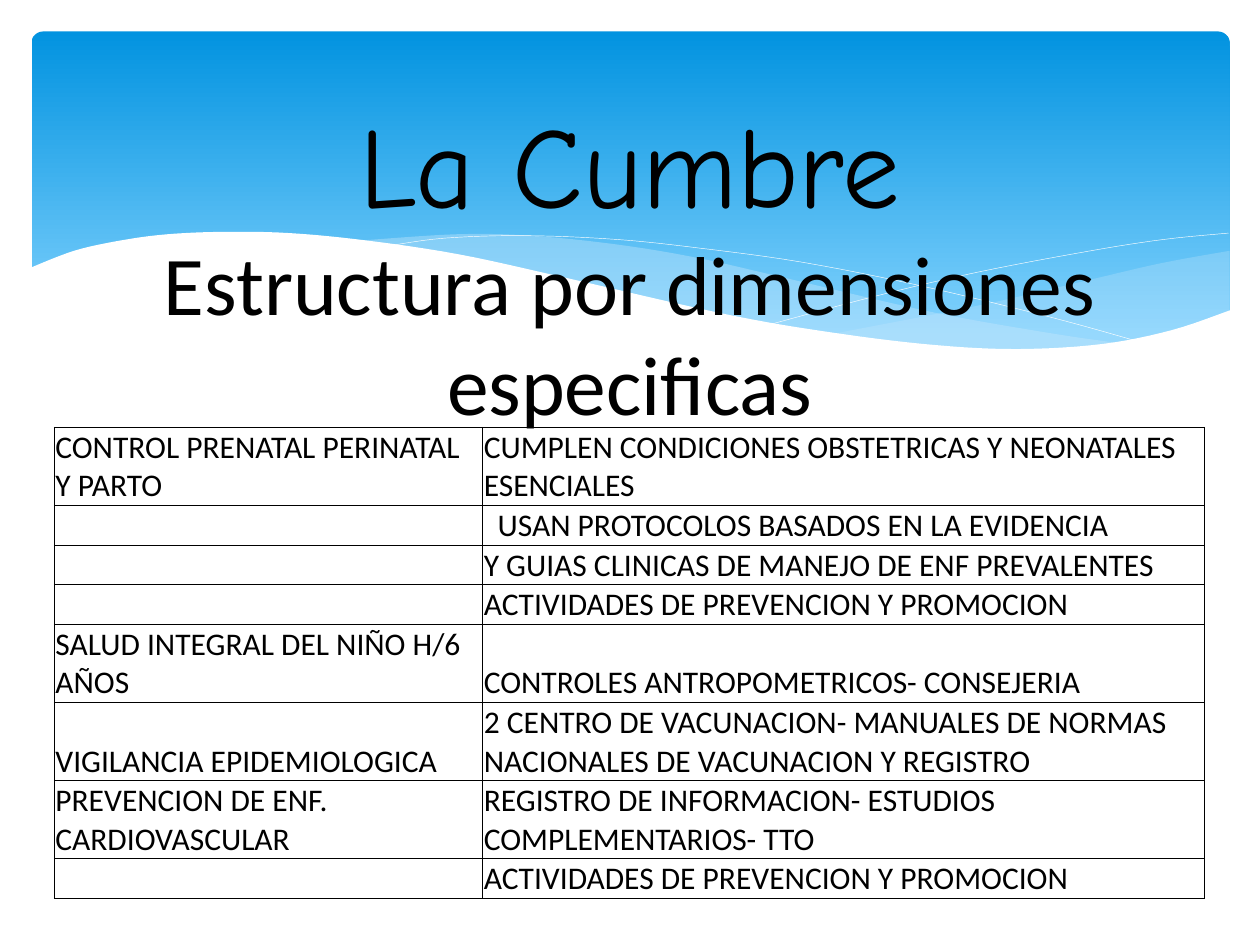
from lxml import etree
from pptx import Presentation, util as u
from pptx.dml.color import RGBColor
from pptx.enum import shapes, text
from pptx.oxml.ns import qn

COLORS = {"ink": "000000", "paper": "FFFFFF", "sky": "0293E0",
          "horizon": "83D3FE", "mist": "C6E7FC"}
COLUMN = ROW = u.Inches(0.1)  # grid of 100 columns by 75 rows


def smooth(knots, steps=6):
    """Catmull-Rom curve through the knots."""
    padded = [knots[0], *knots, knots[-1]]
    points = [knots[0]]
    for p0, p1, p2, p3 in zip(padded, padded[1:], padded[2:], padded[3:]):
        for step in range(1, steps + 1):
            t = step / steps
            points.append(tuple(
                (2 * b + (c - a) * t + (2 * a - 5 * b + 4 * c - d) * t ** 2
                 + (3 * b - a - 3 * c + d) * t ** 3) / 2
                for a, b, c, d in zip(p0, p1, p2, p3)))
    return points


class SlideBuilder:
    def __init__(self, deck):
        self.slide = deck.slides.add_slide(deck.slide_layouts[6])

    def color(self, name):
        return RGBColor.from_string(COLORS[name])

    def box(self, col, row, cols, rows):
        return [round(n) for n in (col * COLUMN, row * ROW, cols * COLUMN, rows * ROW)]

    def style_run(self, run, font, size):
        run.font.name, run.font.size = font, u.Pt(size)
        run.font.color.rgb = self.color("ink")

    def banner(self, col, row, cols, rows):
        banner = self.slide.shapes.add_shape(
            shapes.MSO_SHAPE.ROUNDED_RECTANGLE, *self.box(col, row, cols, rows))
        banner.shadow.inherit = False
        banner.adjustments[0] = 0.034
        banner.line.fill.background()
        banner.fill.gradient()
        banner.fill.gradient_angle = 270
        stops = zip(banner.fill.gradient_stops, ("sky", "horizon"), (0, 0.9))
        for stop, name, position in stops:
            stop.color.rgb = self.color(name)
            stop.position = position

    def wave(self, *curves, fill=None, alpha=100):
        """Filled area bounded by the curves, or a white hairline without fill."""
        points = [(round(x * COLUMN), round(y * ROW))
                  for curve in curves for x, y in smooth(curve)]
        builder = self.slide.shapes.build_freeform(*points[0])
        builder.add_line_segments(points[1:], close=bool(fill))
        wave = builder.convert_to_shape()
        wave.shadow.inherit = False
        if not fill:
            wave.fill.background()
            wave.line.color.rgb = self.color("paper")
            wave.line.width = u.Pt(0.25)
            return
        wave.line.fill.background()
        wave.fill.solid()
        wave.fill.fore_color.rgb = self.color(fill)
        if alpha < 100:
            tint = wave.fill._xPr.find(".//" + qn("a:srgbClr"))
            etree.SubElement(tint, qn("a:alpha"), val=str(alpha * 1000))

    def title(self, place, lines):
        frame = self.slide.shapes.add_textbox(*self.box(*place)).text_frame
        frame.word_wrap = True
        frame.vertical_anchor = text.MSO_ANCHOR.BOTTOM
        frame.margin_bottom = 0
        frame.text = "\n".join(line for line, _, _ in lines)
        for paragraph, (_, font, size) in zip(frame.paragraphs, lines):
            paragraph.alignment = text.PP_ALIGN.CENTER
            self.style_run(paragraph.runs[0], font, size)

    def cell_borders(self, cell):
        props = cell._tc.get_or_add_tcPr()
        for position, side in enumerate(("lnL", "lnR", "lnT", "lnB")):
            border = etree.Element(qn("a:" + side), w=str(u.Pt(0.5)))
            fill = etree.SubElement(border, qn("a:solidFill"))
            etree.SubElement(fill, qn("a:srgbClr"), val=COLORS["ink"])
            props.insert(position, border)

    def table(self, col, row, col_widths, row_heights, records, indented):
        place = self.box(col, row, sum(col_widths), sum(row_heights))
        table = self.slide.shapes.add_table(len(records), len(col_widths), *place).table
        table.first_row = table.horz_banding = False
        for column, width in zip(table.columns, col_widths):
            column.width = round(width * COLUMN)
        for line, height, record in zip(table.rows, row_heights, records):
            line.height = round(height * ROW)
            for cell, words in zip(line.cells, record):
                cell.fill.background()
                cell.vertical_anchor = text.MSO_ANCHOR.BOTTOM
                cell.margin_left = u.Inches(0.12 if words == indented else 0.01)
                cell.margin_right = cell.margin_top = u.Inches(0.01)
                cell.margin_bottom = 0
                self.cell_borders(cell)
                cell.text = words
                for run in cell.text_frame.paragraphs[0].runs:
                    self.style_run(run, "Calibri", 18)


def main():
    deck = Presentation()
    deck.slide_width, deck.slide_height = 100 * COLUMN, 75 * ROW
    page = SlideBuilder(deck)

    # Sky banner
    page.banner(2.5, 2.5, 95.1, 27)

    # Translucent waves
    page.wave([(97.6, 19.9), (92.1, 20.9), (86.1, 22.3), (77.9, 24.2), (66.1, 26.5)],
              [(66.1, 26.5), (71.8, 27.2), (76.9, 27.7), (81.4, 27.8), (86.3, 27.5),
               (90.5, 26.9), (94.2, 25.9), (97.6, 24.7)], fill="mist", alpha=29)
    page.wave([(89.3, 27.3), (83.7, 26.5), (74.1, 24.8), (62.9, 22.2), (55.5, 20.5),
               (48.9, 19.4), (42, 18.7), (36.1, 18.6), (28.6, 19.1)],
              [(28.6, 19.1), (36.2, 20.3), (44.9, 22.2), (56.6, 24.8), (66.5, 26.6),
               (73.6, 27.5), (79.6, 27.8), (84.8, 27.7), (89.3, 27.3)],
              fill="mist", alpha=40)

    # Hairlines
    page.wave([(30.9, 19.5), (35.3, 18.9), (41.6, 18.7), (48.9, 19), (55.6, 19.7),
               (63.6, 20.8), (72.7, 22.6), (83.1, 25.1), (90.7, 27.2)])
    page.wave([(61.3, 25.7), (69.5, 23.5), (77.6, 21.6), (86.6, 19.9),
               (92.4, 19), (97.5, 18.5)])

    # White wave closing the banner
    page.wave([(97.7, 24.6), (93, 26.2), (87.5, 27.3), (80.9, 27.7), (74.4, 27.4),
               (66.8, 26.5), (57.9, 25), (44.7, 22), (36.5, 20.2), (29.2, 19.1),
               (23, 18.5), (17.7, 18.4), (13.2, 18.6), (9.5, 19.1), (5.9, 19.9),
               (2.3, 21.3)],
              [(2.3, 32.9)], [(97.7, 32.9)], fill="paper")

    # Title
    page.title((5, 3.7, 90, 30.6), [
        ("La Cumbre", "Comic Neue", 65.7),
        ("Estructura por dimensiones especificas", "Calibri", 47.7)])

    # Dimensions and their contents
    single, double = 3.15, 6.2
    protocols = "USAN PROTOCOLOS BASADOS EN LA EVIDENCIA"
    prevention = "ACTIVIDADES DE PREVENCION Y PROMOCION"
    page.table(4.3, 33.9, (34, 57.3),
               (double, single, single, single, double, double, double, single), [
        ("CONTROL PRENATAL PERINATAL Y PARTO",
         "CUMPLEN CONDICIONES OBSTETRICAS Y NEONATALES ESENCIALES"),
        ("", protocols),
        ("", "Y GUIAS CLINICAS DE MANEJO DE ENF PREVALENTES"),
        ("", prevention),
        ("SALUD INTEGRAL DEL NIÑO H/6 AÑOS", "CONTROLES ANTROPOMETRICOS- CONSEJERIA"),
        ("VIGILANCIA EPIDEMIOLOGICA",
         "2 CENTRO DE VACUNACION- MANUALES DE NORMAS NACIONALES DE VACUNACION Y REGISTRO"),
        ("PREVENCION DE ENF. CARDIOVASCULAR",
         "REGISTRO DE INFORMACION- ESTUDIOS COMPLEMENTARIOS- TTO"),
        ("", prevention)], indented=protocols)

    deck.save("out.pptx")


if __name__ == "__main__":
    main()
